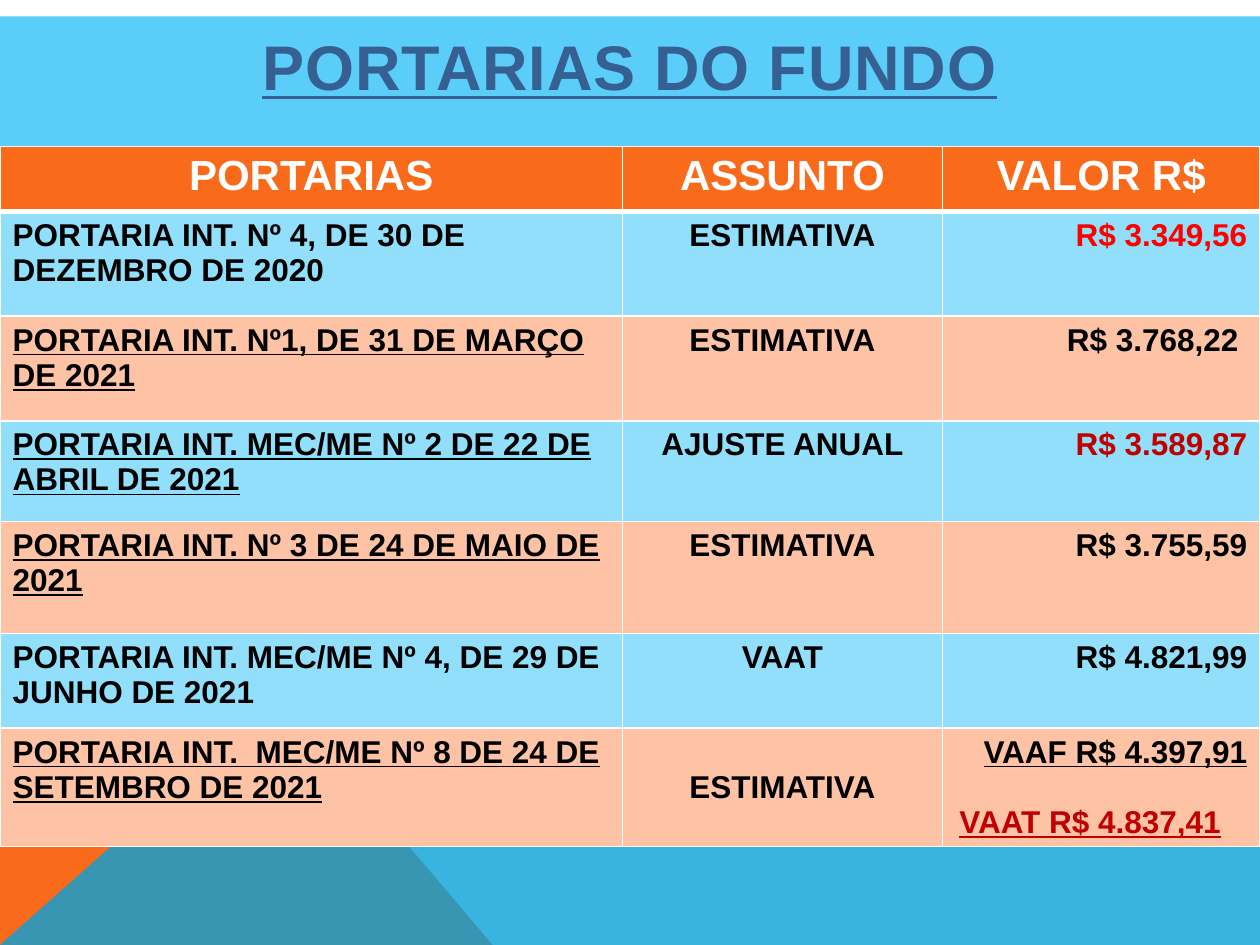
from lxml.etree import SubElement
from pptx import Presentation
from pptx.dml.color import RGBColor
from pptx.enum.shapes import MSO_SHAPE
from pptx.enum.text import MSO_ANCHOR, PP_ALIGN
from pptx.oxml.ns import qn
from pptx.util import Inches, Pt

WHITE = RGBColor(0xFF, 0xFF, 0xFF)
BLACK = RGBColor(0, 0, 0)
RED = RGBColor(0xFF, 0, 0)
DARK = RGBColor(0xC0, 0, 0)
NAVY = RGBColor(0x37, 0x60, 0x92)
ORANGE = RGBColor(0xF9, 0x6A, 0x1B)
PEACH = RGBColor(0xFD, 0xC3, 0xA4)
SKY = RGBColor(0x5A, 0xCE, 0xF9)
PALE = RGBColor(0x91, 0xDF, 0xFB)
BLUE = RGBColor(0x08, 0xA1, 0xD9)

TITLE = "PORTARIAS DO FUNDO"
ROWS = [
    ("PORTARIAS", "ASSUNTO", "VALOR R$"),
    ("PORTARIA INT. Nº 4, DE 30 DE DEZEMBRO DE 2020", "ESTIMATIVA", "R$ 3.349,56"),
    ("PORTARIA INT. Nº1, DE 31 DE MARÇO DE 2021", "ESTIMATIVA", "R$ 3.768,22"),
    ("PORTARIA INT. MEC/ME Nº 2 DE 22 DE ABRIL DE 2021", "AJUSTE ANUAL", "R$ 3.589,87"),
    ("PORTARIA INT. Nº 3 DE 24 DE MAIO DE 2021", "ESTIMATIVA", "R$ 3.755,59"),
    ("PORTARIA INT. MEC/ME Nº 4, DE 29 DE JUNHO DE 2021", "VAAT", "R$ 4.821,99"),
    ("PORTARIA INT.  MEC/ME Nº 8 DE 24 DE SETEMBRO DE 2021", "ESTIMATIVA",
     "VAAF R$ 4.397,91\nVAAT R$ 4.837,41"),
]
WIDTHS = [4.94, 2.54, 2.52]
HEIGHTS = [0.52, 0.83, 0.83, 0.8, 0.89, 0.75, 0.91]
ALIGNS = [PP_ALIGN.LEFT, PP_ALIGN.CENTER, PP_ALIGN.RIGHT]
LINED = {(2, 0), (3, 0), (4, 0), (6, 0), (6, 2)}
TINTS = {(1, 2): RED, (3, 2): DARK}
SHAPES = [
    ([(0, 7.5), (0, 5.52), (2.23, 5.52), (3.91, 7.5)], ORANGE, 100),
    ([(0, 7.5), (2.23, 5.52), (10, 5.53), (10, 7.5)], BLUE, 80),
]


def paint(shape, color):
    shape.shadow.inherit = False
    shape.fill.solid()
    shape.fill.fore_color.rgb = color
    shape.line.fill.background()


def style(para, size, color, align, line=False):
    para.alignment = align
    for run in para.runs:
        font = run.font
        font.name, font.size, font.bold = "Arial", Pt(size), True
        font.color.rgb, font.underline = color, line


def edge(cell, base):
    props = cell._tc.get_or_add_tcPr()
    for side in ("lnL", "lnR", "lnT", "lnB"):
        width = base if side == "lnB" else 1
        line = SubElement(props, qn("a:" + side), w=str(Pt(width)))
        fill = SubElement(line, qn("a:solidFill"))
        SubElement(fill, qn("a:srgbClr"), val=str(WHITE))


deck = Presentation()
deck.slide_width, deck.slide_height = Inches(10), Inches(7.5)
slide = deck.slides.add_slide(deck.slide_layouts[6])

for points, color, alpha in SHAPES:
    spots = [(Inches(x), Inches(y)) for x, y in points]
    build = slide.shapes.build_freeform(*spots[0])
    build.add_line_segments(spots[1:], close=True)
    shape = build.convert_to_shape()
    paint(shape, color)
    if alpha < 100:
        tone = shape._element.spPr.find(qn("a:solidFill"))[0]
        SubElement(tone, qn("a:alpha"), val=str(alpha * 1000))

table = slide.shapes.add_table(len(ROWS), len(WIDTHS), 0, Inches(1.16),
                               Inches(10), Inches(sum(HEIGHTS))).table
for col, width in zip(table.columns, WIDTHS):
    col.width = Inches(width)
for r, (texts, height) in enumerate(zip(ROWS, HEIGHTS)):
    table.rows[r].height = Inches(height)
    for c, text in enumerate(texts):
        cell = table.cell(r, c)
        edge(cell, 3 if r == 0 else 1)
        cell.fill.solid()
        cell.fill.fore_color.rgb = ORANGE if r == 0 else PALE if r % 2 else PEACH
        cell.text_frame.text = text
        for para in cell.text_frame.paragraphs:
            if r == 0:
                style(para, 24, WHITE, PP_ALIGN.CENTER)
            else:
                style(para, 18, TINTS.get((r, c), BLACK), ALIGNS[c], (r, c) in LINED)

table.cell(2, 2).margin_right = Inches(0.17)
table.cell(6, 1).vertical_anchor = MSO_ANCHOR.MIDDLE
last = table.cell(6, 2).text_frame.paragraphs[1]
last.space_before = Pt(20)
last.runs[0].font.color.rgb = DARK
last._p.get_or_add_pPr().set("marR", str(Inches(0.21)))

band = slide.shapes.add_shape(MSO_SHAPE.RECTANGLE, 0, Inches(0.13), Inches(10), Inches(1.03))
paint(band, SKY)
frame = band.text_frame
frame.word_wrap = True
frame.vertical_anchor = MSO_ANCHOR.TOP
frame.margin_top = Inches(0.09)
frame.text = TITLE
head = frame.paragraphs[0]
style(head, 36, NAVY, PP_ALIGN.CENTER, True)
head.runs[0].font._element.set("spc", "50")

deck.save("out.pptx")
